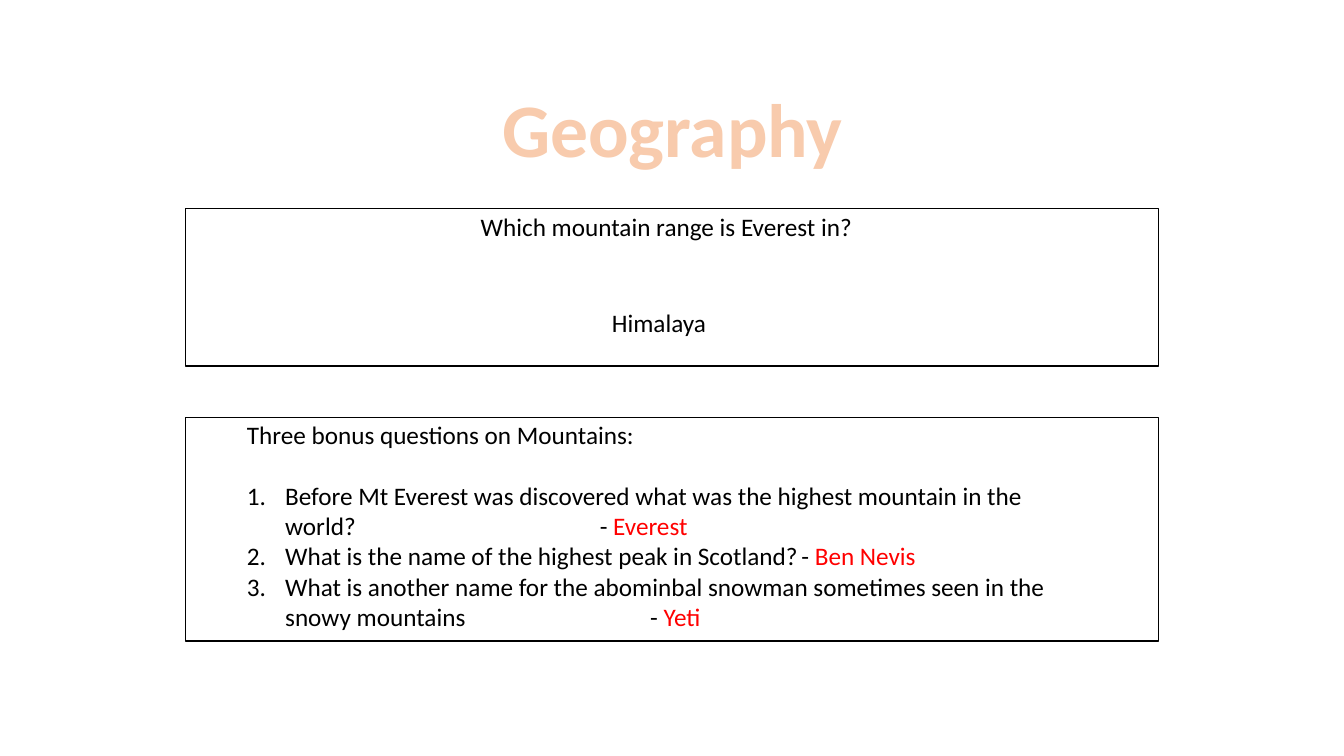
from dataclasses import dataclass

from lxml import etree
from pptx import Presentation
from pptx.dml.color import RGBColor
from pptx.enum.shapes import MSO_SHAPE
from pptx.enum.text import MSO_AUTO_SIZE, PP_ALIGN
from pptx.oxml.ns import qn
from pptx.util import Inches, Pt

RECTANGLE = MSO_SHAPE.RECTANGLE
GROW = MSO_AUTO_SIZE.SHAPE_TO_FIT_TEXT
CENTER = PP_ALIGN.CENTER
LEFT = PP_ALIGN.LEFT

WIDTH, HEIGHT = Inches(13.33), Inches(7.5)
COLORS = {"ink": "000000", "answer": "FF0000", "title": "F8CBAD", "title_edge": "ED7D31"}
BODY = {"name": "Calibri", "size": Pt(18)}
TITLE = {"name": "Calibri", "size": Pt(54), "bold": True}
HANGING = {"marL": str(Inches(0.38)), "indent": str(-Inches(0.38))}


@dataclass(frozen=True)
class Area:
    """Left, top, width and height in percent of the slide."""
    left: float
    top: float
    width: float
    height: float

    def emu(self) -> tuple[int, ...]:
        pairs = ((self.left, WIDTH), (self.top, HEIGHT), (self.width, WIDTH), (self.height, HEIGHT))
        return tuple(round(share * full / 100) for share, full in pairs)


@dataclass(frozen=True)
class Line:
    text: str
    area: Area
    style: dict
    color: str = "ink"
    wrap: bool = False
    align: PP_ALIGN = LEFT


@dataclass(frozen=True)
class Bonus:
    question: str
    tabs: int
    answer: str


HEADING = Line("Geography", Area(36.46, 10.13, 27.16, 13.47), TITLE, "title", align=CENTER)
STARTER = (
    Line("Which mountain range is Everest in?", Area(35.03, 27.33, 29.48, 5.33), BODY),
    Line("Himalaya", Area(44.79, 40, 8.63, 5.33), BODY),
)
BONUS_INTRO = Line("Three bonus questions on Mountains:", Area(17.63, 54.8, 64.37, 29.6), BODY, wrap=True)
BONUSES = (
    Bonus("Before Mt Everest was discovered what was the highest mountain in the world?", 5, "Everest"),
    Bonus("What is the name of the highest peak in Scotland?", 1, "Ben Nevis"),
    Bonus("What is another name for the abominbal snowman sometimes seen in the snowy mountains", 4, "Yeti"),
)
FRAMES = (Area(13.8, 27.6, 72.39, 20.8), Area(13.8, 55.2, 72.39, 29.6))


def add_run(paragraph, text: str, style: dict, color: str):
    run = paragraph.add_run()
    run.text = text
    for attribute, value in style.items():
        setattr(run.font, attribute, value)
    run.font.color.rgb = RGBColor.from_string(COLORS[color])
    return run


def add_line(slide, line: Line):
    frame = slide.shapes.add_textbox(*line.area.emu()).text_frame
    frame.word_wrap = line.wrap
    frame.auto_size = GROW
    frame.paragraphs[0].alignment = line.align
    add_run(frame.paragraphs[0], line.text, line.style, line.color)
    return frame


def outline_letters(run, color: str, width: float) -> None:
    edge = etree.Element(qn("a:ln"), w=str(Pt(width)))
    fill = etree.SubElement(edge, qn("a:solidFill"))
    etree.SubElement(fill, qn("a:srgbClr"), val=COLORS[color])
    run.font._element.insert(0, edge)


def add_bonus(frame, bonus: Bonus) -> None:
    paragraph = frame.add_paragraph()
    properties = paragraph._p.get_or_add_pPr()
    for name, value in HANGING.items():
        properties.set(name, value)
    etree.SubElement(properties, qn("a:buAutoNum"), type="arabicPeriod")
    add_run(paragraph, bonus.question + "\t" * bonus.tabs + "- ", BODY, "ink")
    add_run(paragraph, bonus.answer, BODY, "answer")


def add_frame(slide, area: Area) -> None:
    box = slide.shapes.add_shape(RECTANGLE, *area.emu())
    box.shadow.inherit = False
    box.fill.background()
    box.line.color.rgb = RGBColor.from_string(COLORS["ink"])
    box.line.width = Pt(1)


def main() -> None:
    deck = Presentation()
    deck.slide_width, deck.slide_height = WIDTH, HEIGHT
    slide = deck.slides.add_slide(deck.slide_layouts[6])

    heading = add_line(slide, HEADING)
    outline_letters(heading.paragraphs[0].runs[0], "title_edge", 1.75)
    for line in STARTER:
        add_line(slide, line)

    bonus_round = add_line(slide, BONUS_INTRO)
    bonus_round.paragraphs[0].space_after = Pt(22)
    for bonus in BONUSES:
        add_bonus(bonus_round, bonus)

    for area in FRAMES:
        add_frame(slide, area)
    deck.save("out.pptx")


if __name__ == "__main__":
    main()
